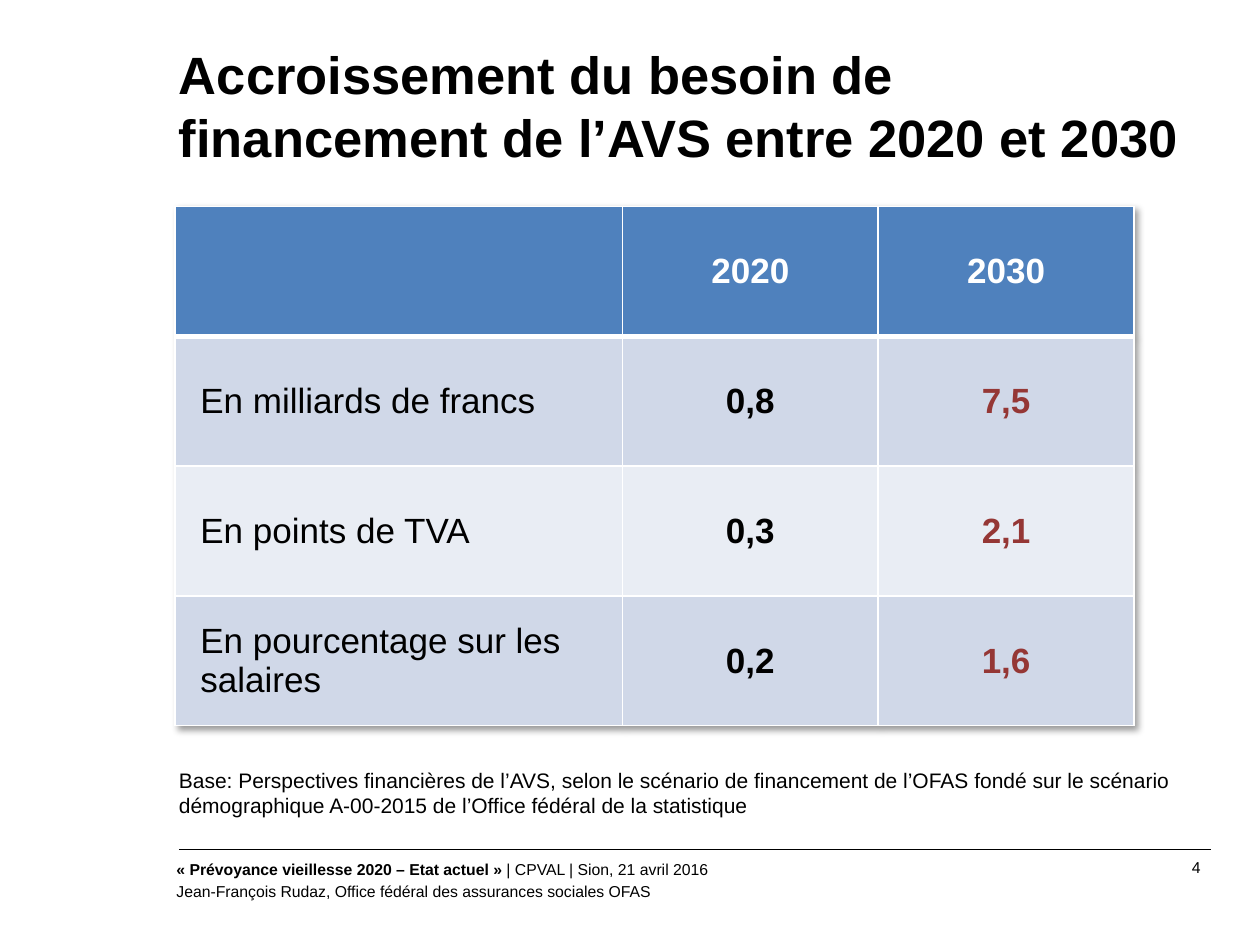
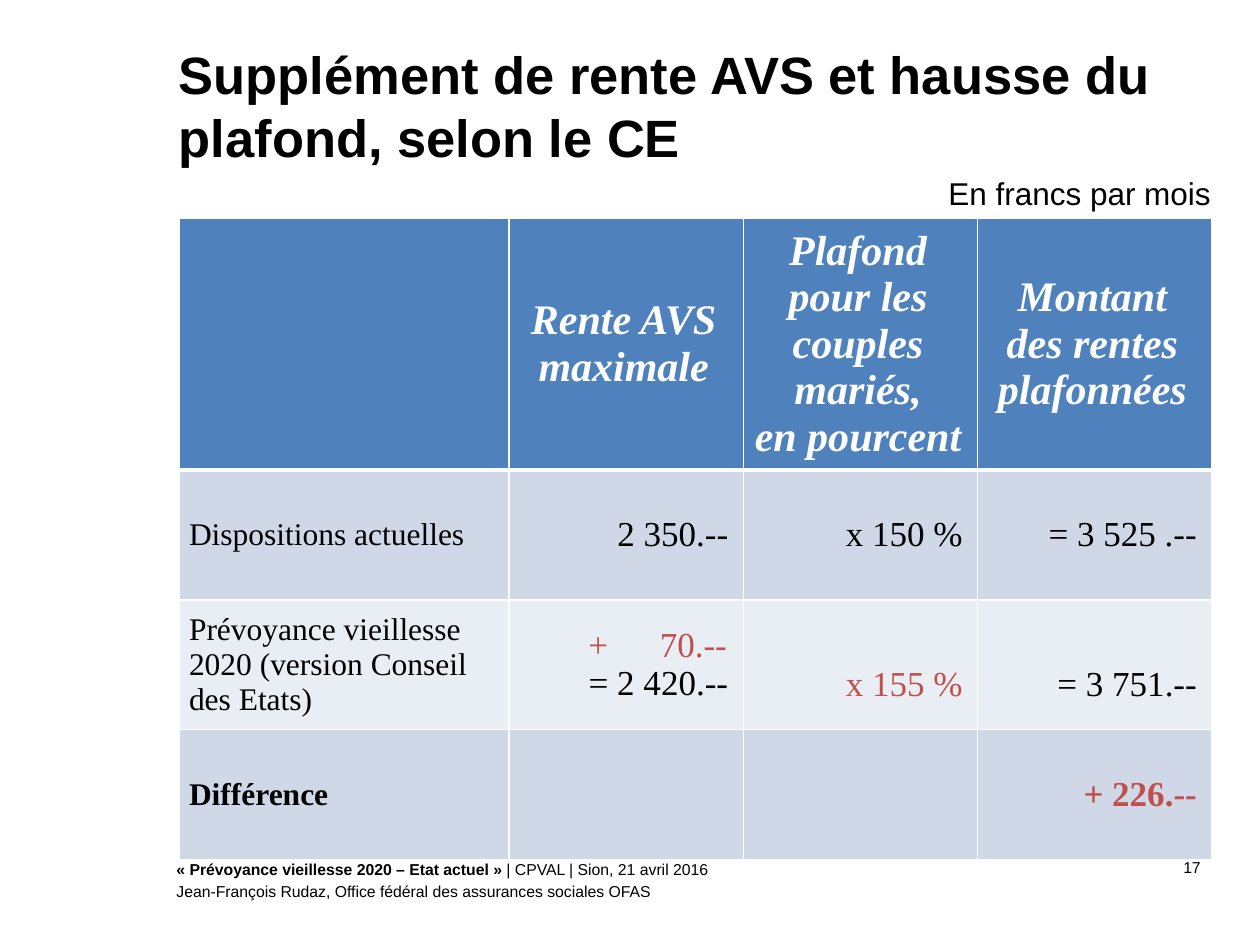
from lxml.etree import SubElement
from pptx import Presentation
from pptx.dml.color import RGBColor
from pptx.enum.shapes import MSO_CONNECTOR
from pptx.enum.text import MSO_ANCHOR, PP_ALIGN
from pptx.oxml import parse_xml
from pptx.oxml.ns import nsdecls, qn
from pptx.util import Inches, Pt

BLACK = RGBColor(0x00, 0x00, 0x00)
WHITE = RGBColor(0xFF, 0xFF, 0xFF)
HEADER_BLUE = RGBColor(0x4F, 0x81, 0xBD)
BAND_DARK = RGBColor(0xD0, 0xD8, 0xE8)
BAND_LIGHT = RGBColor(0xE9, 0xED, 0xF4)
DARK_RED = RGBColor(0x95, 0x37, 0x35)
RED = RGBColor(0xC0, 0x50, 0x4D)

LEFT, RIGHT = 1.42, 9.61
BASE = {"name": "Arial", "size": 12, "bold": False, "italic": False,
        "color": BLACK, "align": PP_ALIGN.LEFT}
TITLE = BASE | {"size": 30, "bold": True}
FOOTER = BASE | {"size": 9}
FOOTER_LINES = [
    [("« Prévoyance vieillesse 2020 – Etat actuel » ", {"bold": True}),
     ("| CPVAL | Sion, 21 avril 2016", {})],
    [("Jean-François Rudaz, Office fédéral des assurances sociales OFAS", {})],
]
CENTRED = {"align": PP_ALIGN.CENTER}
TO_RIGHT = {"align": PP_ALIGN.RIGHT}
SERIF = BASE | {"name": "Times New Roman"}

PAGES = [
    {
        "number": "4",
        "title": "Accroissement du besoin de financement de l’AVS entre 2020 et 2030",
        "caption": "Base: Perspectives financières de l’AVS, selon le scénario de "
                   "financement de l’OFAS fondé sur le scénario démographique "
                   "A-00-2015 de l’Office fédéral de la statistique",
        "caption_at": (LEFT, 6.04, 8.19, 0.5),
        "caption_style": BASE,
        "table_at": (1.39, 1.64),
        "columns": [3.55, 2.03, 2.03],
        "row_heights": [1.03] * 4,
        "margins": (0.2, 0.05, 0.2, 0.05),
        "header": BASE | CENTRED | {"size": 20, "bold": True, "color": WHITE},
        "label": BASE | {"size": 20},
        "value": BASE | CENTRED | {"size": 20, "bold": True},
        "accents": {(row, 2): {"color": DARK_RED} for row in (1, 2, 3)},
        "shadow": True,
        "rows": [
            ["", "2020", "2030"],
            ["En milliards de francs", "0,8", "7,5"],
            ["En points de TVA", "0,3", "2,1"],
            ["En pourcentage sur les salaires", "0,2", "1,6"],
        ],
    },
    {
        "number": "17",
        "title": "Supplément de rente AVS et hausse du plafond, selon le CE",
        "caption": "En francs par mois",
        "caption_at": (4.89, 1.33, 4.72, 0.4),
        "caption_style": BASE | TO_RIGHT | {"size": 18},
        "table_at": (LEFT, 1.73),
        "columns": [2.62, 1.86, 1.86, 1.86],
        "row_heights": [1.92, 1.03, 1.03, 1.03],
        "margins": (0.08, 0.04, 0.12, 0.04),
        "header": SERIF | CENTRED | {"size": 24, "bold": True, "italic": True,
                                     "color": WHITE},
        "label": SERIF | {"size": 18},
        "value": SERIF | TO_RIGHT | {"size": 20},
        "accents": {(2, 2): {"color": RED}, (3, 0): {"bold": True},
                    (3, 3): {"color": RED, "bold": True}},
        "shadow": False,
        "rows": [
            ["", "Rente AVS maximale",
             "Plafond pour les couples mariés,\nen pourcent",
             "Montant des rentes plafonnées"],
            ["Dispositions actuelles", "2 350.--", "x 150 %", "= 3 525 .--"],
            ["Prévoyance vieillesse 2020 (version Conseil des Etats)",
             "\t+\t70.--\n= 2 420.--", "x 155 %", "= 3 751.--"],
            ["Différence", "", "", "+ 226.--"],
        ],
    },
]


def write(frame, lines, style, fixed_spacing=True):
    """Write lines, each a list of (text, style changes), one paragraph a line."""
    frame.word_wrap = True
    for index, line in enumerate(lines):
        para = frame.paragraphs[0] if index == 0 else frame.add_paragraph()
        para.alignment = style["align"]
        if fixed_spacing:
            para.line_spacing = Pt(1.2 * style["size"])
        for text, changes in line:
            span = para.add_run()
            span.text = text
            look = style | changes
            for name in ("name", "bold", "italic"):
                setattr(span.font, name, look[name])
            span.font.size = Pt(look["size"])
            span.font.color.rgb = look["color"]


def add_box(page, place, lines, style, padding=0):
    box = page.shapes.add_textbox(*map(Inches, place))
    frame = box.text_frame
    frame.margin_left = frame.margin_right = 0
    frame.margin_top = frame.margin_bottom = Inches(padding)
    write(frame, lines, style)
    return box


deck = Presentation()
deck.slide_width, deck.slide_height = Inches(10), Inches(7.5)

for content in PAGES:
    page = deck.slides.add_slide(deck.slide_layouts[5])

    # Footer
    add_box(page, (9.03, 6.81, 0.5, 0.16), [[(content["number"], {})]],
            FOOTER | TO_RIGHT)
    footer = add_box(page, (1.4, 6.82, 7.48, 0.47), FOOTER_LINES, FOOTER)
    footer.text_frame.paragraphs[1].space_before = Pt(2)
    rule = page.shapes.add_connector(MSO_CONNECTOR.STRAIGHT, Inches(LEFT),
                                     Inches(6.74), Inches(RIGHT), Inches(6.74))
    rule.line.color.rgb = BLACK
    rule.line.width = Pt(0.75)
    SubElement(rule._element.spPr, qn("a:effectLst"))

    # Title
    title = page.shapes.title
    title.left, title.top = Inches(LEFT), Inches(0.33)
    title.width, title.height = Inches(RIGHT - LEFT), Inches(1.1)
    frame = title.text_frame
    for side in ("left", "top", "right", "bottom"):
        setattr(frame, f"margin_{side}", 0)
    frame.vertical_anchor = MSO_ANCHOR.TOP
    write(frame, [[(content["title"], {})]], TITLE)

    # Table
    widths, heights = content["columns"], content["row_heights"]
    table = page.shapes.add_table(
        len(heights), len(widths), *map(Inches, content["table_at"]),
        Inches(sum(widths)), Inches(sum(heights))).table
    for column, width in zip(table.columns, widths):
        column.width = Inches(width)
    for row, height in zip(table.rows, heights):
        row.height = Inches(height)
    if content["shadow"]:
        table._tbl.tblPr.insert(0, parse_xml(
            f'<a:effectLst {nsdecls("a")}><a:outerShdw blurRad="50800" dist="38100" '
            'dir="2700000" algn="tl" rotWithShape="0"><a:srgbClr val="000000">'
            '<a:alpha val="40000"/></a:srgbClr></a:outerShdw></a:effectLst>'))

    for row, texts in enumerate(content["rows"]):
        for column, text in enumerate(texts):
            cell = table.cell(row, column)
            cell.vertical_anchor = MSO_ANCHOR.MIDDLE
            for side, margin in zip(("left", "top", "right", "bottom"),
                                    content["margins"]):
                setattr(cell, f"margin_{side}", Inches(margin))
            if row == 0:
                cell.margin_top = cell.margin_bottom = 0
            for side in "LRTB":
                thick = (row, side) in ((0, "B"), (1, "T"))
                cell._tc.get_or_add_tcPr().append(parse_xml(
                    f'<a:ln{side} {nsdecls("a")} w="{Pt(3 if thick else 1)}">'
                    f'<a:solidFill><a:srgbClr val="{WHITE}"/></a:solidFill>'
                    f'</a:ln{side}>'))
            cell.fill.solid()
            cell.fill.fore_color.rgb = (
                HEADER_BLUE if row == 0 else BAND_DARK if row % 2 else BAND_LIGHT)
            if text:
                kind = "header" if row == 0 else "value" if column else "label"
                style = content[kind] | content["accents"].get((row, column), {})
                write(cell.text_frame, [[(line, {})] for line in text.split("\n")],
                      style, fixed_spacing=False)

    # Caption
    add_box(page, content["caption_at"], [[(content["caption"], {})]],
            content["caption_style"], padding=0.05)

# Supplement above its sum; the two cells beside it align with the sum
supplement = table.cell(2, 1).text_frame.paragraphs[0]
supplement.alignment = PP_ALIGN.LEFT
supplement.runs[0].font.color.rgb = RED
tabs = SubElement(supplement._p.get_or_add_pPr(), qn("a:tabLst"))
for position, alignment in ((0.55, "l"), (1.65, "r")):
    SubElement(tabs, qn("a:tab"), pos=str(Inches(position)), algn=alignment)
for column in (2, 3):
    table.cell(2, column).margin_top = Inches(0.35)

deck.save("out.pptx")
